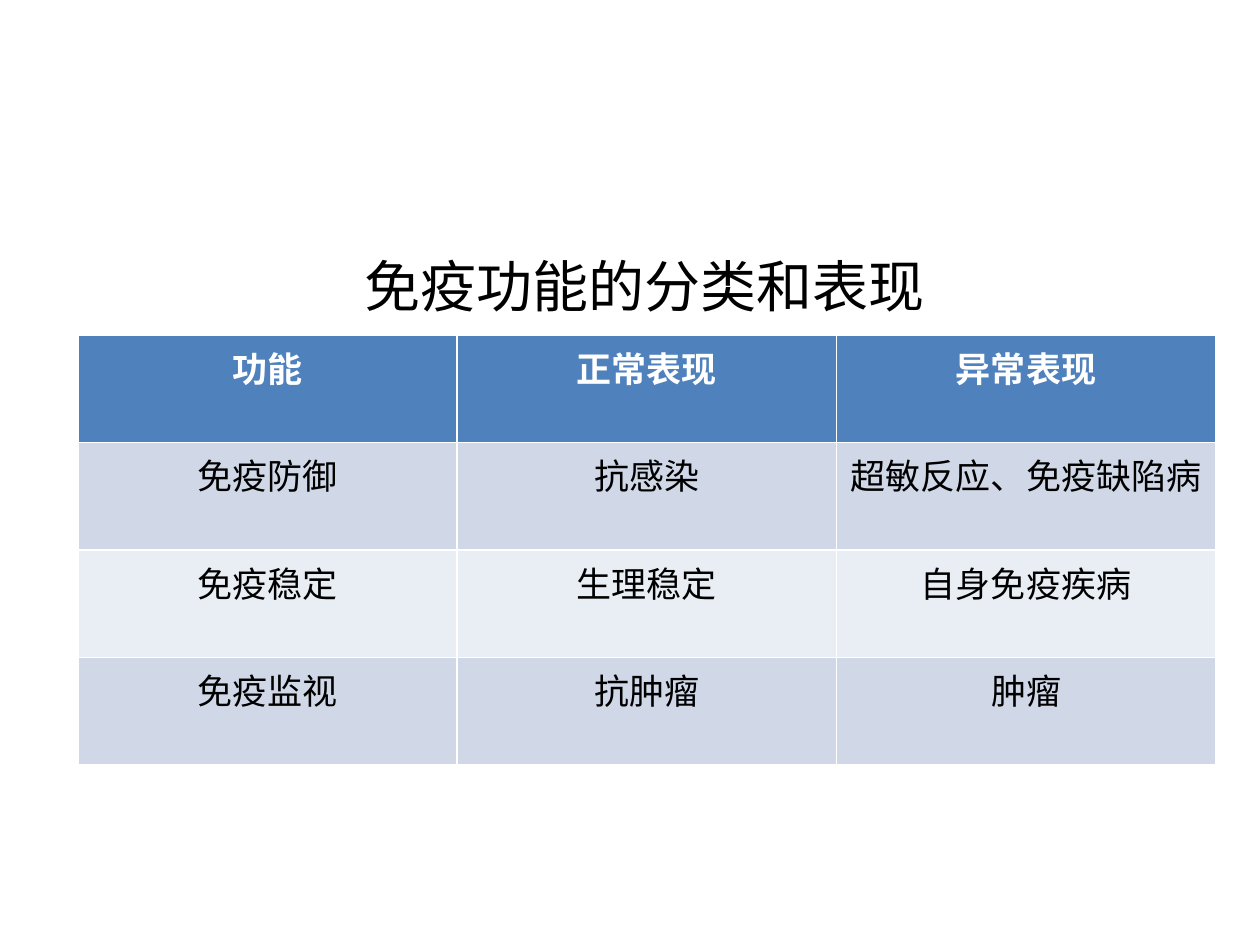
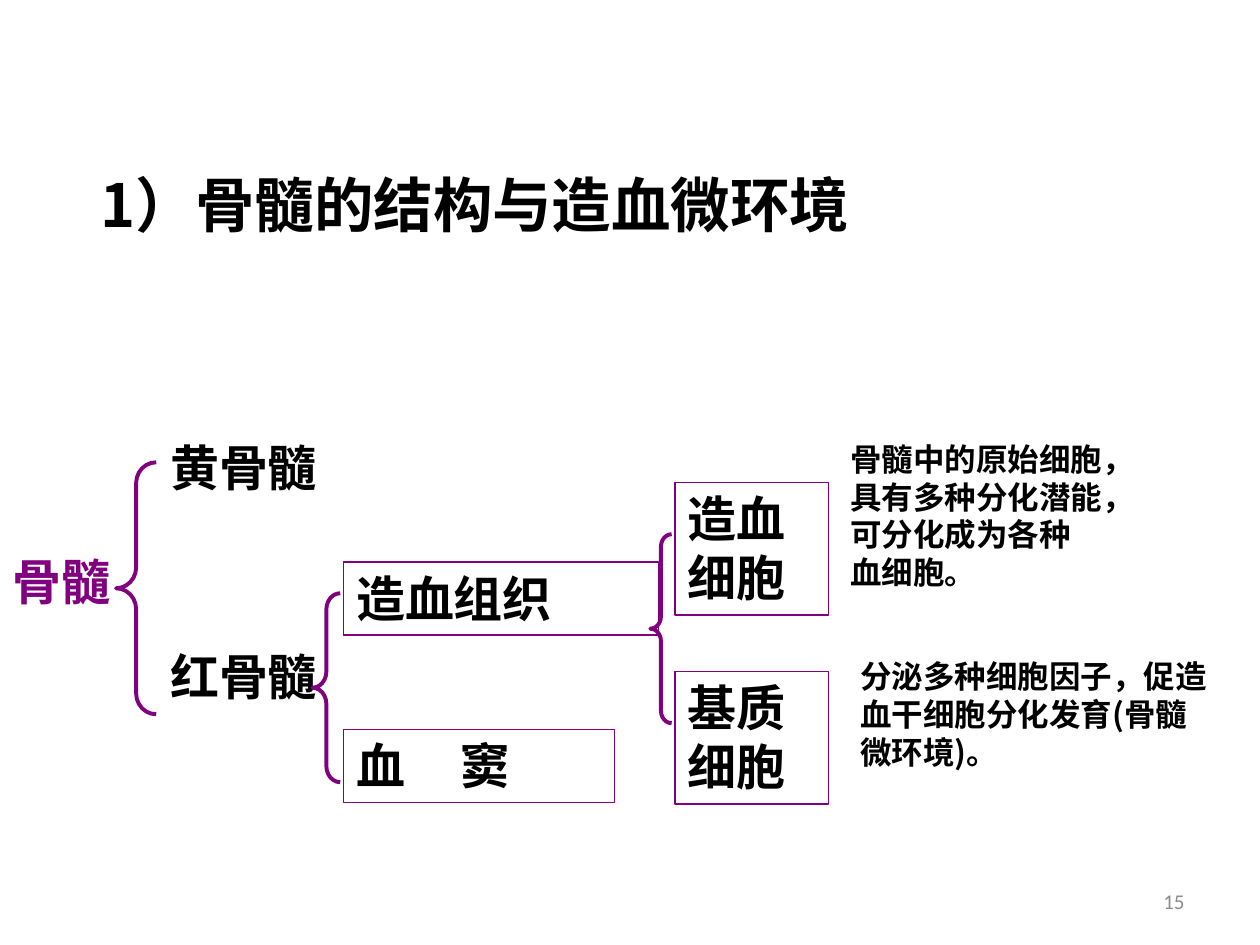
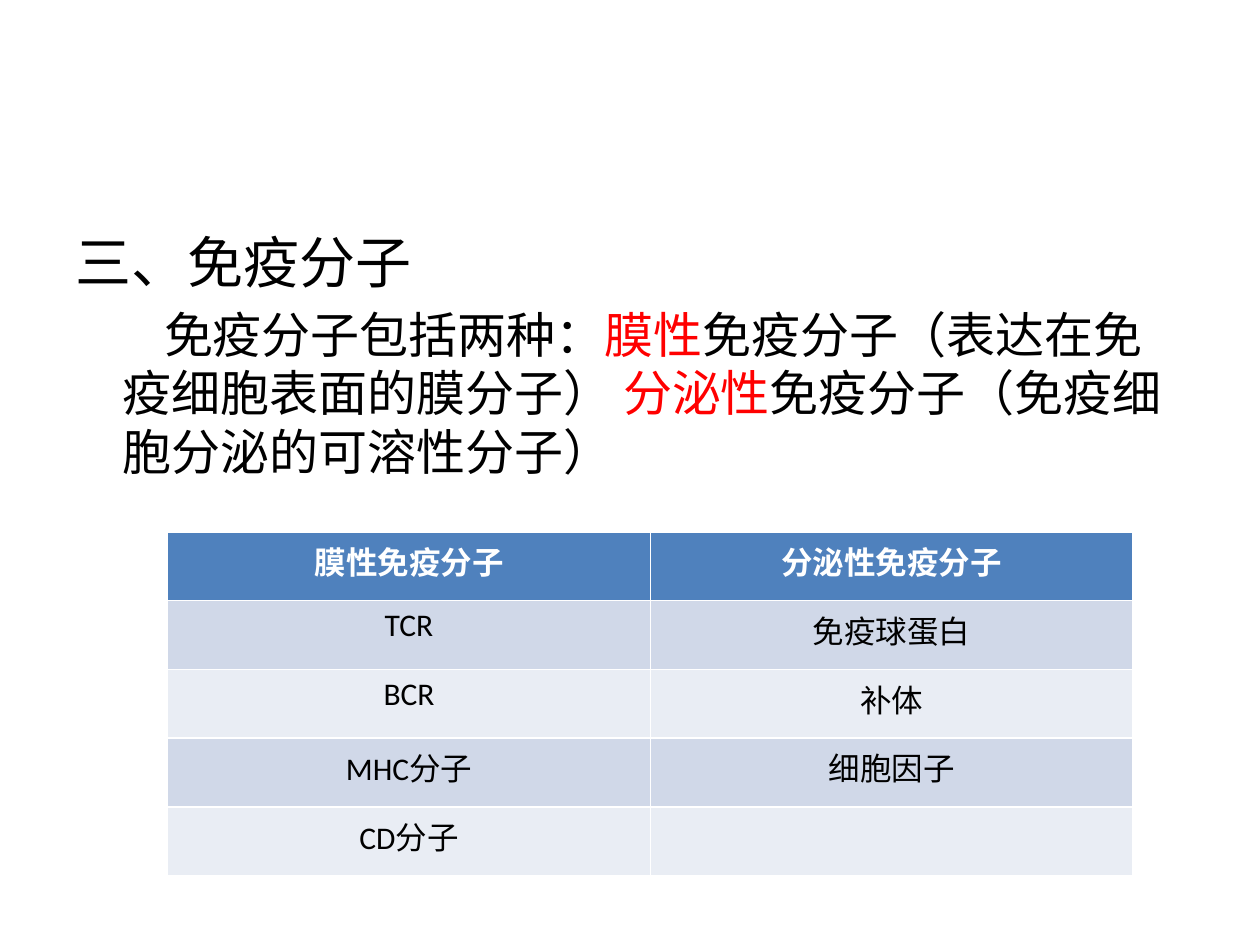
from lxml import etree
from pptx import Presentation
from pptx import util as u
from pptx.dml.color import RGBColor
from pptx.enum import shapes, text
from pptx.oxml.ns import qn

BLACK, WHITE, RED, PURPLE, GREY = "000000", "FFFFFF", "FF0000", "800080", "8C8C8C"
HEADER, BANDS = "4F81BD", ("D0D8E8", "E9EDF4")
CALIBRI, DEJAVU, NOTO = "Calibri", "DejaVu Sans", "Noto Sans CJK SC"
TITLE_AND_BODY, TITLE_ONLY = 1, 5
LEFT, CENTER, RIGHT = text.PP_ALIGN.LEFT, text.PP_ALIGN.CENTER, text.PP_ALIGN.RIGHT
TOP, MIDDLE = text.MSO_ANCHOR.TOP, text.MSO_ANCHOR.MIDDLE


def rgb(value):
    return RGBColor.from_string(value)


def set_format(target, **values):
    """Set each named attribute of target."""
    for name, value in values.items():
        setattr(target, name, value)


def lengths(place):
    return [u.Cm(value) for value in place]


class Lesson:
    def __init__(self):
        self.deck = Presentation()
        set_format(self.deck, slide_width=u.Cm(25.4), slide_height=u.Cm(19.05))
        self.page = None

    def new_page(self, layout):
        self.page = self.deck.slides.add_slide(self.deck.slide_layouts[layout])

    def add_spans(self, para, spans, size, font=CALIBRI, bold=False, color=BLACK, align=LEFT):
        """Fill a paragraph with a string or with (string, colour) pairs."""
        para.alignment = align
        pairs = [(spans, color)] if isinstance(spans, str) else spans
        for words, span_color in pairs:
            span = para.add_run()
            span.text = words
            set_format(span.font, name=font, size=u.Pt(size), bold=bold)
            span.font.color.rgb = rgb(span_color)

    def fill_box(self, box, lines, anchor=TOP, **style):
        frame = box.text_frame
        set_format(frame, word_wrap=True, auto_size=text.MSO_AUTO_SIZE.NONE,
                   vertical_anchor=anchor)
        for index, line in enumerate(lines):
            para = frame.add_paragraph() if index else frame.paragraphs[0]
            self.add_spans(para, line, **style)
        return frame.paragraphs

    def place_box(self, box, place):
        set_format(box, **dict(zip(("left", "top", "width", "height"), lengths(place))))

    def title(self, words, place, **style):
        box = self.page.shapes.title
        self.place_box(box, place)
        return self.fill_box(box, [words], **style)[0]

    def body(self, lines, place, **style):
        box = self.page.placeholders[1]
        self.place_box(box, place)
        paras = self.fill_box(box, lines, **style)
        for para in paras:
            etree.SubElement(para._p.get_or_add_pPr(), qn("a:buNone"))
        return paras

    def label(self, lines, place, **style):
        return self.fill_box(self.page.shapes.add_textbox(*lengths(place)), lines, **style)

    def outline(self, kind, place, width):
        shape = self.page.shapes.add_shape(kind, *lengths(place))
        shape.shadow.inherit = False
        shape.fill.background()
        shape.line.color.rgb = rgb(PURPLE)
        shape.line.width = u.Pt(width)
        return shape

    def brace(self, place, curve):
        shape = self.outline(shapes.MSO_SHAPE.LEFT_BRACE, place, 2.25)
        shape.adjustments[0] = curve

    def framed(self, lines, place, **style):
        shape = self.outline(shapes.MSO_SHAPE.RECTANGLE, place, 0.75)
        return self.fill_box(shape, lines, **style)

    def table(self, rows, place, size):
        """Add a table with a dark header, banded rows and equal cells."""
        frame = self.page.shapes.add_table(len(rows), len(rows[0]), *lengths(place))
        for row_index, row in enumerate(rows):
            head = row_index == 0
            fill = HEADER if head else BANDS[(row_index - 1) % 2]
            for column_index, words in enumerate(row):
                cell = frame.table.cell(row_index, column_index)
                cell.fill.solid()
                cell.fill.fore_color.rgb = rgb(fill)
                if words:
                    self.add_spans(cell.text_frame.paragraphs[0], words, size, bold=head,
                                   color=WHITE if head else BLACK, align=CENTER)


def add_functions(lesson):
    lesson.new_page(TITLE_ONLY)
    lesson.title("免疫功能的分类和表现", (3.76, 4.95, 18.47, 1.63), size=32, align=CENTER)
    lesson.table([
        ("功能", "正常表现", "异常表现"),
        ("免疫防御", "抗感染", "超敏反应、免疫缺陷病"),
        ("免疫稳定", "生理稳定", "自身免疫疾病"),
        ("免疫监视", "抗肿瘤", "肿瘤"),
    ], (1.57, 6.76, 22.94, 8.66), size=20)


def add_marrow(lesson):
    lesson.new_page(TITLE_ONLY)
    heading = lesson.title("1）骨髓的结构与造血微环境", (1.78, 2.97, 24.56, 1.98),
                           size=34, font=NOTO, bold=True)
    heading.line_spacing = 1.2

    term = dict(size=28, font=DEJAVU, bold=True)
    lesson.label(["骨髓"], (0, 11, 3.18, 1.45), color=PURPLE, **term)
    lesson.label(["黄骨髓"], (3.18, 8.69, 3.48, 1.45), **term)
    lesson.label(["红骨髓"], (3.18, 12.9, 4.24, 1.45), **term)
    lesson.framed(["造血组织"], (6.93, 11.33, 6.35, 1.47), **term)
    sinus = lesson.framed(["血\t窦"], (6.93, 14.71, 5.46, 1.47), **term)[0]
    stops = etree.SubElement(sinus._p.get_or_add_pPr(), qn("a:tabLst"))
    etree.SubElement(stops, qn("a:tab"), pos=str(u.Cm(2.1)), algn="l")
    for top, kind in ((9.73, "造血"), (13.54, "基质")):
        lesson.framed([kind, "细胞"], (13.61, top, 3.1, 2.67), **term)

    for place, curve in (
        ((2.34, 9.32, 0.81, 5.08), 0.52),
        ((6.3, 11.96, 0.56, 3.81), 0.58),
        ((13.11, 10.77, 0.43, 3.81), 0.58),
    ):
        lesson.brace(place, curve)

    note = dict(size=18, font=NOTO, bold=True)
    lesson.label(["骨髓中的原始细胞，", "具有多种分化潜能，", "可分化成为各种", "血细胞。"],
                 (16.89, 8.74, 11.68, 4.32), **note)
    lesson.label(["分泌多种细胞因子，促造血干细胞分化发育(骨髓微环境)。"],
                 (17.09, 13.13, 7.67, 4.32), **note)
    lesson.label(["15"], (18.21, 17.65, 5.92, 1.02), size=12, color=GREY,
                 align=RIGHT, anchor=MIDDLE)


def add_molecules(lesson):
    lesson.new_page(TITLE_AND_BODY)
    title = lesson.page.shapes.title
    title.element.getparent().remove(title.element)
    heading, summary = lesson.body([
        "三、免疫分子",
        [("免疫分子包括两种：", BLACK), ("膜性", RED),
         ("免疫分子（表达在免疫细胞表面的膜分子） ", BLACK), ("分泌性", RED),
         ("免疫分子（免疫细胞分泌的可溶性分子）", BLACK)],
    ], (1.27, 4.45, 22.86, 12.57), size=28)
    heading.runs[0].font.size = u.Pt(32)
    heading.space_before = u.Pt(0)
    summary._p.get_or_add_pPr().set("indent", str(u.Cm(0.83)))
    lesson.table([
        ("膜性免疫分子", "分泌性免疫分子"),
        ("TCR", "免疫球蛋白"),
        ("BCR", "补体"),
        ("MHC分子", "细胞因子"),
        ("CD分子", ""),
    ], (3.38, 10.72, 19.46, 6.93), size=18)


def main():
    lesson = Lesson()
    add_functions(lesson)
    add_marrow(lesson)
    add_molecules(lesson)
    lesson.deck.save("out.pptx")


if __name__ == "__main__":
    main()
